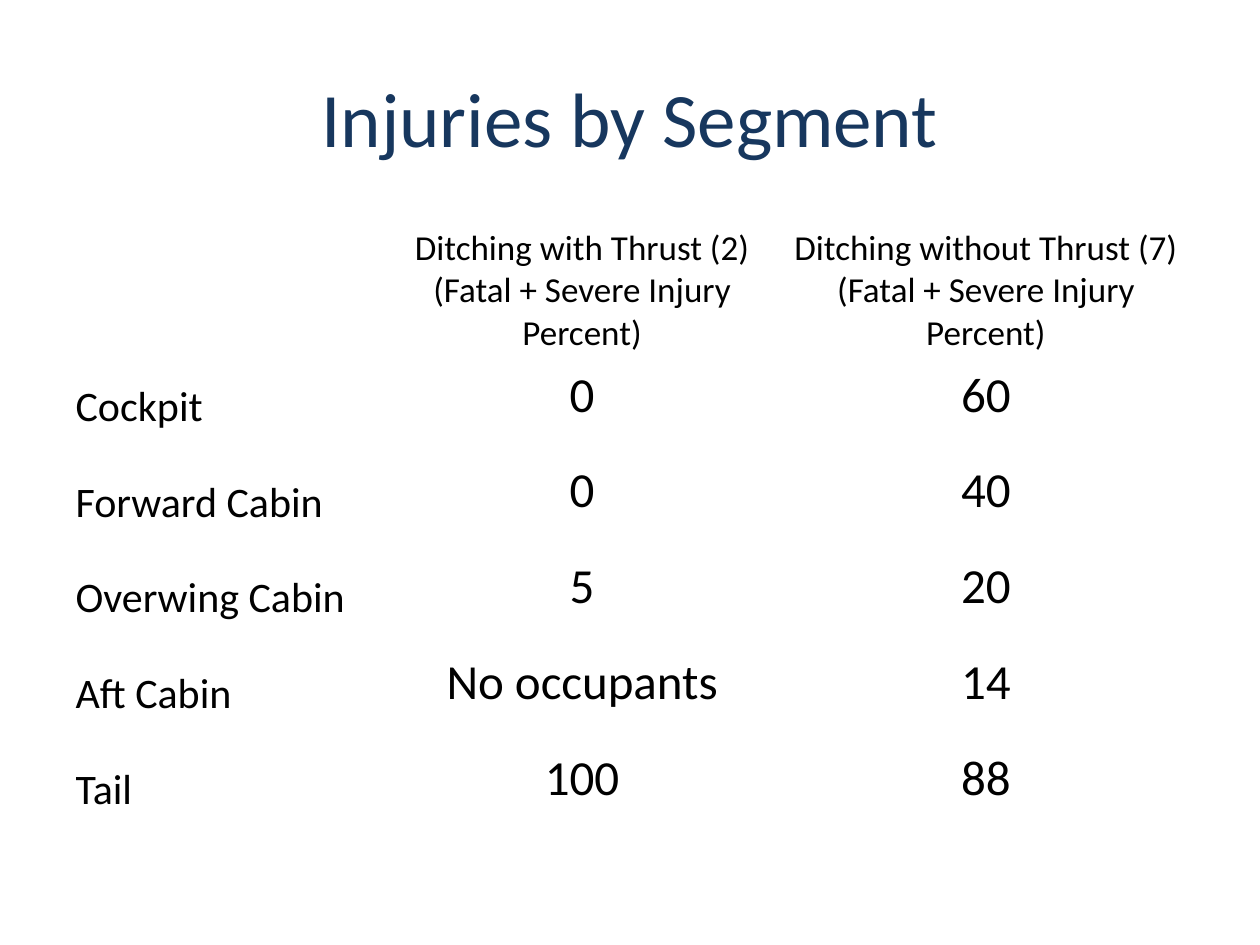
import pptx
import pptx.util
import pptx.dml.color
import pptx.enum.text
from dataclasses import dataclass

Inches = pptx.util.Inches
Align = pptx.enum.text.PP_ALIGN
Anchor = pptx.enum.text.MSO_ANCHOR


@dataclass
class Theme:
    font: str = "Calibri"
    navy: str = "17375E"
    black: str = "000000"
    title: int = 44
    head: int = 20
    label: int = 24
    value: int = 28


theme = Theme()


def write(frame, text, size, color, align):
    frame.text = text
    para = frame.paragraphs[0]
    para.alignment = align
    for run in para.runs:
        run.font.name = theme.font
        run.font.size = pptx.util.Pt(size)
        run.font.bold = False
        run.font.color.rgb = pptx.dml.color.RGBColor.from_string(color)


deck = pptx.Presentation()
deck.slide_width, deck.slide_height = Inches(10), Inches(7.5)
slide = deck.slides.add_slide(deck.slide_layouts[6])

# Title
title = slide.shapes.add_textbox(Inches(0.5), Inches(0.3), Inches(9), Inches(1.25))
title.text_frame.word_wrap = True
title.text_frame.vertical_anchor = Anchor.MIDDLE
write(title.text_frame, "Injuries by Segment", theme.title, theme.navy, Align.CENTER)

# Injury table
rows = [
    ("", "Ditching with Thrust (2) (Fatal + Severe Injury Percent)",
     "Ditching without Thrust (7) (Fatal + Severe Injury Percent)"),
    ("Cockpit", "0", "60"),
    ("Forward Cabin", "0", "40"),
    ("Overwing Cabin", "5", "20"),
    ("Aft Cabin", "No occupants", "14"),
    ("Tail", "100", "88"),
]
widths = [2.58, 3.08, 3.33]
heights = [1.1] + [0.76] * 5
table = slide.shapes.add_table(
    len(rows), len(widths), Inches(0.5), Inches(1.75),
    Inches(sum(widths)), Inches(sum(heights))).table
table.first_row = table.horz_banding = False
for col, width in zip(table.columns, widths):
    col.width = Inches(width)
for row, height in zip(table.rows, heights):
    row.height = Inches(height)

# Headings sit low, labels in the middle, values at the top
for r, row in enumerate(rows):
    for c, text in enumerate(row):
        cell = table.cell(r, c)
        cell.fill.background()
        if r == 0:
            size, anchor = theme.head, Anchor.BOTTOM
        elif c == 0:
            size, anchor = theme.label, Anchor.MIDDLE
        else:
            size, anchor = theme.value, Anchor.TOP
        cell.vertical_anchor = anchor
        align = Align.LEFT if c == 0 else Align.CENTER
        write(cell.text_frame, text, size, theme.black, align)

# The plain grid style has neither fills nor rules
style = table._tbl.tblPr.find(pptx.oxml.ns.qn("a:tableStyleId"))
style.text = "{2D5ABB26-0587-4C30-8999-92F81FD0307C}"

deck.save("out.pptx")
